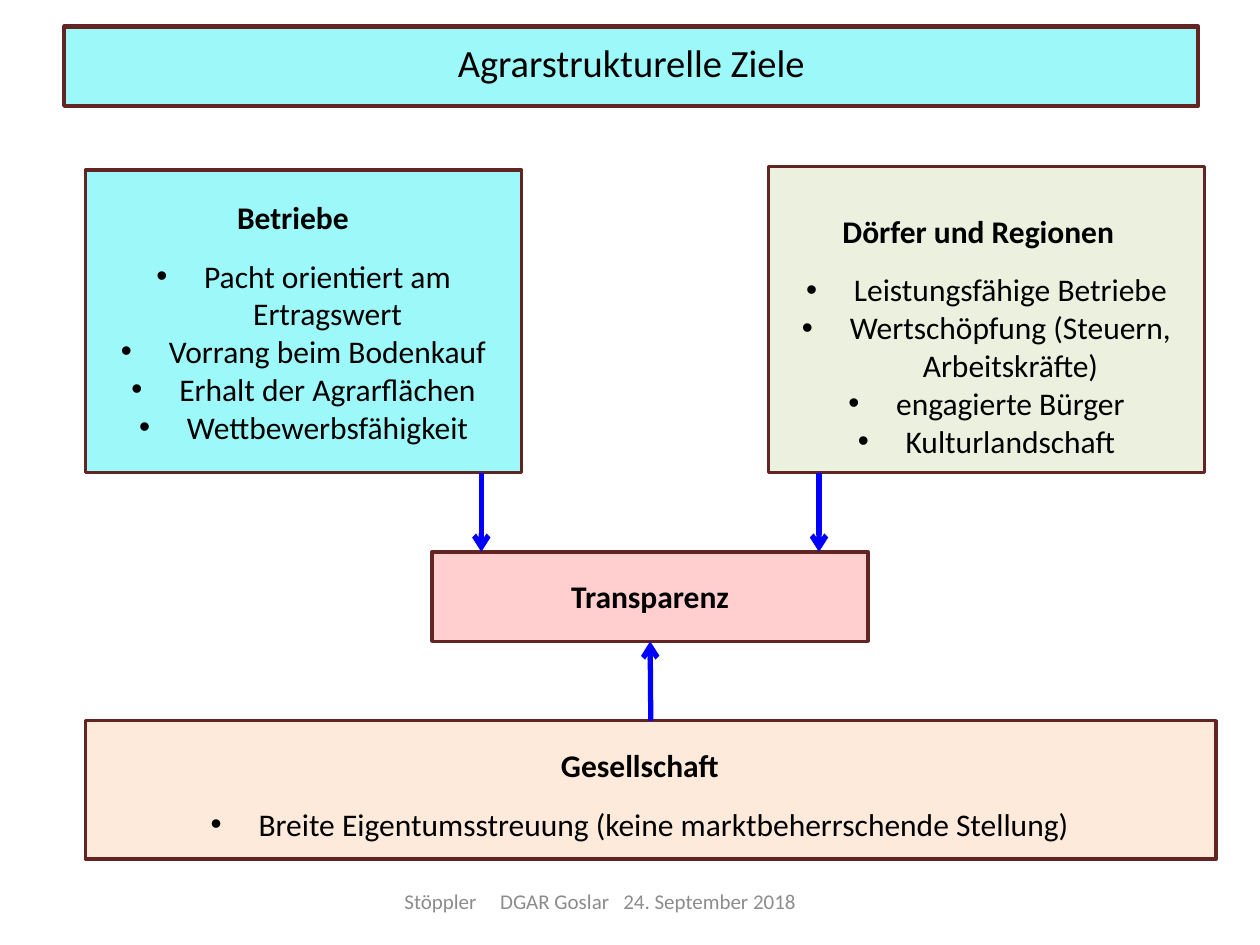
import dataclasses

import lxml.etree
import pptx
import pptx.dml.color
import pptx.enum.shapes
import pptx.enum.text
import pptx.oxml.ns
import pptx.util

Inches = pptx.util.Inches
Pt = pptx.util.Pt
Anchor = pptx.enum.text.MSO_ANCHOR
qn = pptx.oxml.ns.qn


@dataclasses.dataclass(frozen=True)
class Theme:
    font: str = "Calibri"
    title_size: float = 22
    text_size: float = 18
    footer_size: float = 12
    text: str = "000000"
    footer: str = "8C8C8C"
    border: str = "632523"
    arrow: str = "0000FF"
    cyan: str = "9DF9F9"
    green: str = "EBF1DE"
    orange: str = "FDEADA"
    red: str = "FF0000"


theme = Theme()


def rgb(value):
    return pptx.dml.color.RGBColor.from_string(value)


def add_text(box, text, size=theme.text_size, color=theme.text, bold=False,
             bullet=False, first=False, before=0, right=0):
    frame = box.text_frame
    para = frame.paragraphs[0] if first else frame.add_paragraph()
    para.alignment = pptx.enum.text.PP_ALIGN.CENTER
    para.space_before = Pt(before)
    span = para.add_run()
    span.text = text
    span.font.name = theme.font
    span.font.size = Pt(size)
    span.font.bold = bold
    span.font.color.rgb = rgb(color)
    properties = para._p.get_or_add_pPr()
    indent = Inches(0.38) if bullet else 0
    properties.set("marL", str(indent))
    properties.set("marR", str(Inches(right)))
    properties.set("indent", str(-indent))
    if bullet:
        font = lxml.etree.SubElement(properties, qn("a:buFont"))
        font.set("typeface", "Arial")
        lxml.etree.SubElement(properties, qn("a:buChar")).set("char", "•")
    else:
        lxml.etree.SubElement(properties, qn("a:buNone"))


deck = pptx.Presentation()
deck.slide_width, deck.slide_height = Inches(10), Inches(7.5)
page = deck.slides.add_slide(deck.slide_layouts[1])
title, regions = page.shapes.title, page.placeholders[1]
farms, society, transparency = [
    page.shapes.add_shape(pptx.enum.shapes.MSO_SHAPE.RECTANGLE, 0, 0, 0, 0)
    for _ in range(3)
]
for box in (farms, society, transparency):
    box.shadow.inherit = False

# Boxes: position, fill, border width, top and right inset
boxes = [
    (title, (0.51, 0.21, 9, 0.63), theme.cyan, 2.5, 0, 0.1),
    (regions, (6.1, 1.32, 3.46, 2.43), theme.green, 2, 0.36, 0.1),
    (farms, (0.68, 1.35, 3.46, 2.4), theme.cyan, 2, 0.22, 0.1),
    (society, (0.68, 5.72, 8.97, 1.1), theme.orange, 2, 0.2, 0.27),
    (transparency, (3.43, 4.38, 3.46, 0.71), theme.red, 2, 0.2, 0.1),
]
for box, place, fill, width, top, right in boxes:
    box.left, box.top, box.width, box.height = [Inches(v) for v in place]
    box.fill.solid()
    box.fill.fore_color.rgb = rgb(fill)
    box.line.color.rgb = rgb(theme.border)
    box.line.width = Pt(width)
    frame = box.text_frame
    frame.word_wrap = True
    frame.auto_size = pptx.enum.text.MSO_AUTO_SIZE.NONE
    frame.vertical_anchor = Anchor.TOP
    frame.margin_top, frame.margin_right = Inches(top), Inches(right)
    frame.margin_left, frame.margin_bottom = Inches(0.1), 0

# The transparency box is itself see-through
color = transparency._element.spPr.find(qn("a:solidFill"))[0]
lxml.etree.SubElement(color, qn("a:alpha")).set("val", "19000")

# Title
title.text_frame.vertical_anchor = Anchor.MIDDLE
title.text_frame.margin_bottom = Inches(0.06)
add_text(title, "Agrarstrukturelle Ziele", size=theme.title_size, first=True)

# Headings and goals
goals = [
    (regions, "Dörfer und Regionen", 0.13, [
        "Leistungsfähige Betriebe",
        "Wertschöpfung (Steuern, Arbeitskräfte)",
        "engagierte Bürger",
        "Kulturlandschaft",
    ]),
    (farms, "Betriebe", 0.17, [
        "Pacht orientiert am Ertragswert",
        "Vorrang beim Bodenkauf",
        "Erhalt der Agrarflächen",
        "Wettbewerbsfähigkeit",
    ]),
    (society, "Gesellschaft", 0, [
        "Breite Eigentumsstreuung (keine marktbeherrschende Stellung)",
    ]),
    (transparency, "Transparenz", 0, []),
]
for box, heading, right, items in goals:
    add_text(box, heading, bold=True, first=True, right=right)
    for number, item in enumerate(items):
        add_text(box, item, bullet=True, before=0 if number else 12)

# Arrows towards transparency
arrows = [
    page.shapes.add_connector(
        pptx.enum.shapes.MSO_CONNECTOR.STRAIGHT,
        Inches(x), Inches(start), Inches(x), Inches(end))
    for x, start, end in [(3.82, 3.75, 4.38), (6.5, 3.75, 4.38), (5.16, 5.72, 5.09)]
]
arrows[-1].begin_connect(society, 0)
arrows[-1].end_connect(transparency, 2)
for arrow in arrows:
    arrow.line.color.rgb = rgb(theme.arrow)
    arrow.line.width = Pt(3)
    line = arrow.line._get_or_add_ln()
    lxml.etree.SubElement(line, qn("a:tailEnd")).set("type", "arrow")
    lxml.etree.SubElement(arrow._element.spPr, qn("a:effectLst"))

# Footer
footer = page.shapes.add_textbox(Inches(1.46), Inches(6.95), Inches(6.61), Inches(0.4))
footer.text_frame.word_wrap = True
footer.text_frame.vertical_anchor = Anchor.MIDDLE
add_text(footer, "Stöppler     DGAR Goslar   24. September 2018",
         size=theme.footer_size, color=theme.footer, first=True)

deck.save("out.pptx")
